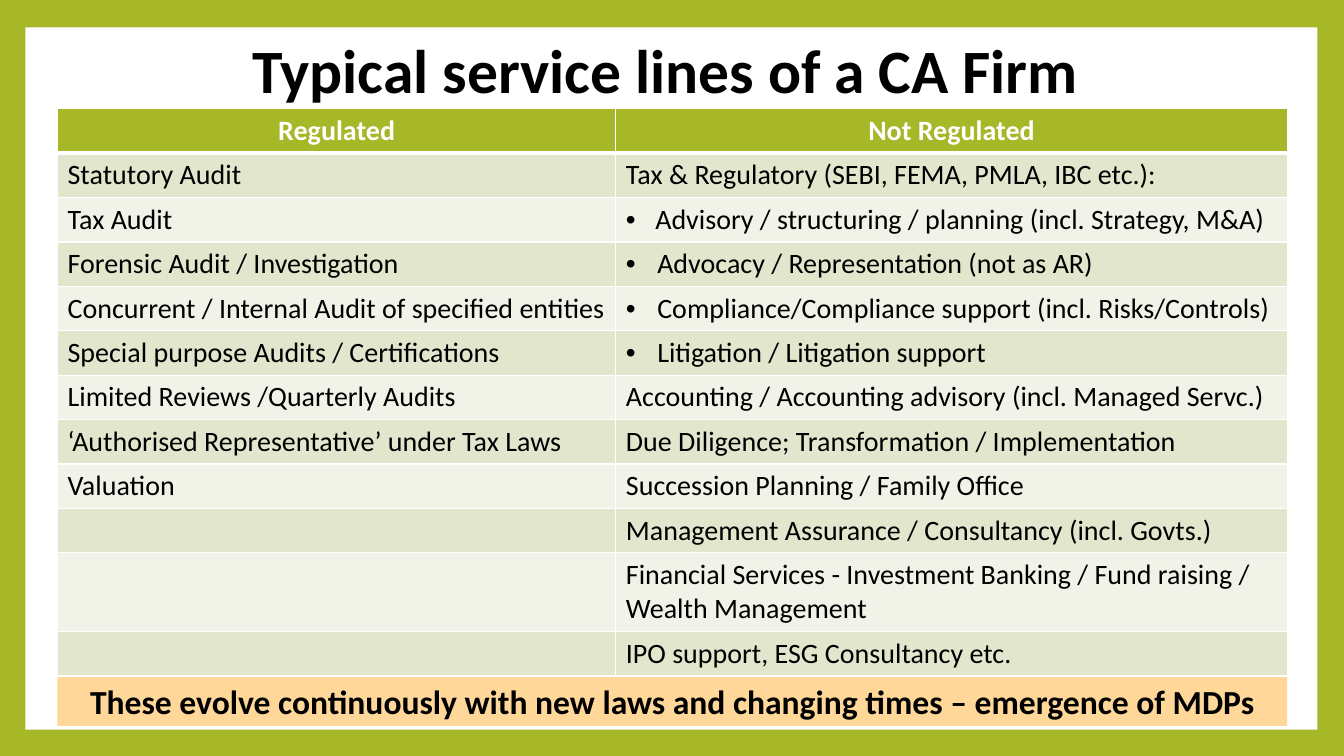
from lxml.etree import SubElement
from pptx import Presentation
from pptx.dml.color import RGBColor as Rgb
from pptx.enum.shapes import MSO_SHAPE as Shape
from pptx.enum.text import MSO_ANCHOR as Anchor, PP_ALIGN as Align
from pptx.oxml.ns import qn
from pptx.util import Cm, Pt

HUES = {
    "green": "A6B727",
    "dark": "E1E6CD",
    "light": "F1F3E8",
    "sand": "FFD899",
    "white": "FFFFFF",
    "black": "000000",
}
FONT = "Calibri"
LEFT, WIDTH = 1.45, 30.99
DOT = "• "  # marks a bulleted entry

ROWS = [
    ("Regulated", "Not Regulated"),
    ("Statutory Audit", "Tax & Regulatory (SEBI, FEMA, PMLA, IBC etc.):"),
    ("Tax Audit", DOT + "Advisory / structuring / planning (incl. Strategy, M&A)"),
    ("Forensic Audit / Investigation", DOT + "Advocacy / Representation (not as AR)"),
    ("Concurrent / Internal Audit of specified entities",
     DOT + "Compliance/Compliance support (incl. Risks/Controls)"),
    ("Special purpose Audits / Certifications", DOT + "Litigation / Litigation support"),
    ("Limited Reviews /Quarterly Audits",
     "Accounting / Accounting advisory (incl. Managed Servc.)"),
    ("‘Authorised Representative’ under Tax Laws",
     "Due Diligence; Transformation / Implementation"),
    ("Valuation", "Succession Planning / Family Office"),
    ("", "Management Assurance / Consultancy (incl. Govts.)"),
    ("", "Financial Services - Investment Banking / Fund raising / Wealth Management"),
    ("", "IPO support, ESG Consultancy etc."),
]


def paint(fill, hue):
    fill.solid()
    fill.fore_color.rgb = Rgb.from_string(HUES[hue])


def write(frame, text, size, hue="black", bold=False, align=Align.LEFT):
    frame.text = text
    para = frame.paragraphs[0]
    para.alignment = align
    for run in para.runs:
        font = run.font
        font.name, font.size, font.bold = FONT, Pt(size), bold
        font.color.rgb = Rgb.from_string(HUES[hue])
    return para


def add_rect(slide, left, top, width, height, hue):
    rect = slide.shapes.add_shape(
        Shape.RECTANGLE, Cm(left), Cm(top), Cm(width), Cm(height))
    rect.shadow.inherit = False
    rect.line.fill.background()
    paint(rect.fill, hue)
    return rect


def add_dot(para, indent):
    props = para._p.get_or_add_pPr()
    props.set("marL", str(Cm(indent)))
    props.set("indent", str(-Cm(indent)))
    SubElement(props, qn("a:buFont"), typeface="Arial")
    SubElement(props, qn("a:buChar"), char=DOT.strip())


def add_edges(cell, top, bottom):
    props = cell._tc.get_or_add_tcPr()
    for side, width in (("L", 1), ("R", 1), ("T", top), ("B", bottom)):
        line = SubElement(props, qn("a:ln" + side), w=str(Pt(width)))
        fill = SubElement(line, qn("a:solidFill"))
        SubElement(fill, qn("a:srgbClr"), val=HUES["white"])


def fill_cell(cell, text, row):
    # The heavy rule lies between the header and the first row
    add_edges(cell, 3 if row == 1 else 1, 3 if row == 0 else 1)
    if row == 0:
        paint(cell.fill, "green")
        write(cell.text_frame, text, 20, "white", True, Align.CENTER)
        return
    paint(cell.fill, "dark" if row % 2 else "light")
    para = write(cell.text_frame, text.removeprefix(DOT), 20)
    if text.startswith(DOT):
        add_dot(para, 0.74 if row == 2 else 0.79)


def add_grid(slide):
    high = 1.05
    table = slide.shapes.add_table(
        len(ROWS), 2, Cm(LEFT), Cm(2.74), Cm(WIDTH), Cm(high * len(ROWS))).table
    for col, width in zip(table.columns, (14.07, 16.92)):
        col.width = Cm(width)
    for row, texts in enumerate(ROWS):
        table.rows[row].height = Cm(high)
        for col, text in enumerate(texts):
            fill_cell(table.cell(row, col), text, row)


def add_title(slide, text):
    title = slide.shapes.title
    title.left, title.top = Cm(3.23), Cm(0.74)
    title.width, title.height = Cm(27.1), Cm(3.96)
    frame = title.text_frame
    frame.vertical_anchor = Anchor.TOP
    frame.margin_top = Cm(0.27)
    write(frame, text, 44, bold=True, align=Align.CENTER).line_spacing = 0.9


def add_banner(slide, text):
    frame = add_rect(slide, LEFT, 17.02, WIDTH, 1.27, "sand").text_frame
    frame.word_wrap = True
    frame.vertical_anchor = Anchor.MIDDLE
    write(frame, text, 24, bold=True, align=Align.CENTER)


def main():
    deck = Presentation()
    deck.slide_width, deck.slide_height = Cm(33.87), Cm(19.05)
    slide = deck.slides.add_slide(deck.slide_layouts[5])

    # Green frame around a white panel, kept behind the title
    paint(slide.background.fill, "green")
    panel = add_rect(slide, 0.64, 0.69, 32.56, 17.7, "white")
    slide.shapes._spTree.insert(2, panel._element)

    # Content
    add_title(slide, "Typical service lines of a CA Firm")
    add_banner(slide, "These evolve continuously with new laws and changing times"
                      " – emergence of MDPs")
    add_grid(slide)
    deck.save("out.pptx")


if __name__ == "__main__":
    main()
